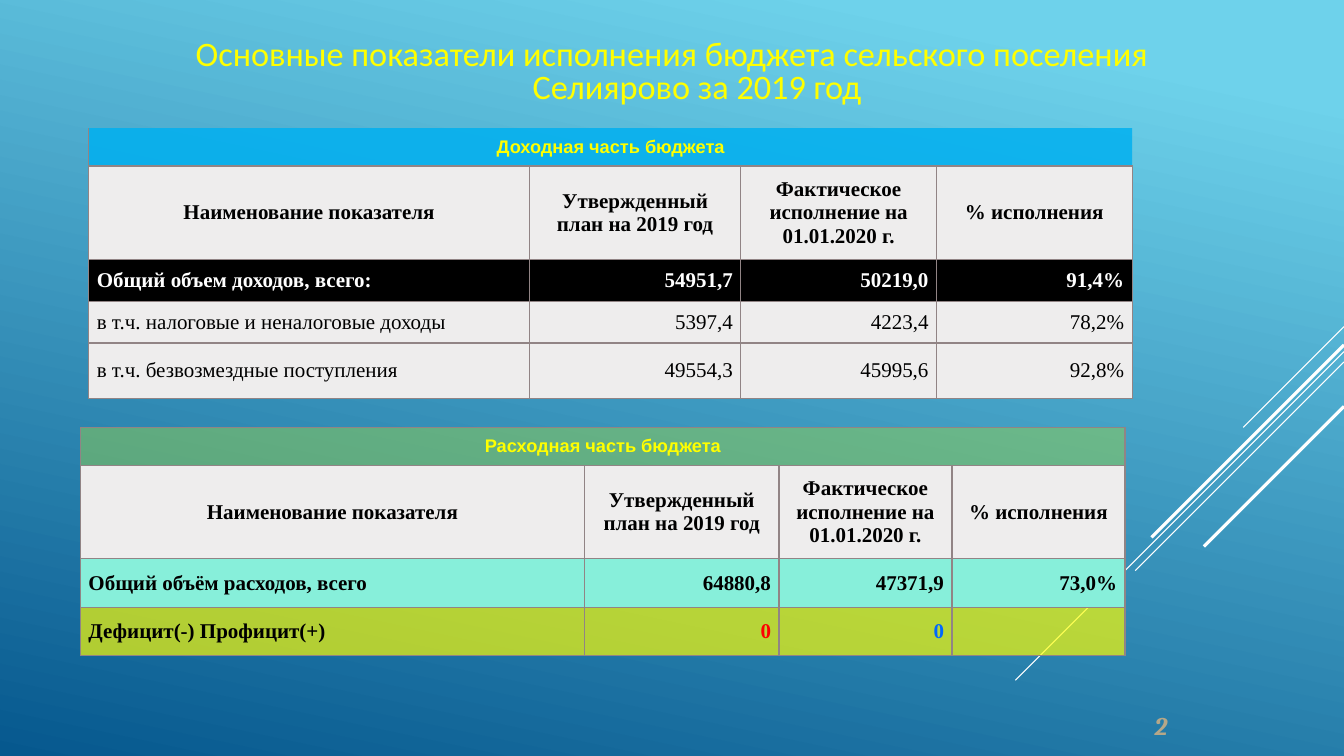
import pptx
import pptx.util
import pptx.dml.color
import pptx.enum.shapes
import pptx.enum.text
import pptx.oxml
import pptx.oxml.ns
from lxml import etree

Cm = pptx.util.Cm
Pt = pptx.util.Pt
RGBColor = pptx.dml.color.RGBColor
ALIGN = pptx.enum.text.PP_ALIGN
ANCHOR = pptx.enum.text.MSO_ANCHOR
qn = pptx.oxml.ns.qn

SKY = RGBColor(0x6E, 0xD2, 0xEB)
DEEP_BLUE = RGBColor(0x06, 0x58, 0x8E)
WHITE = RGBColor(0xFF, 0xFF, 0xFF)
BLACK = RGBColor(0x00, 0x00, 0x00)
YELLOW = RGBColor(0xFF, 0xFF, 0x00)
SAND = RGBColor(0xB5, 0xA7, 0x88)
BORDER = RGBColor(0x91, 0x84, 0x85)
PALE = RGBColor(0xEE, 0xED, 0xED)
CYAN = RGBColor(0x00, 0xB0, 0xF0)
GREEN = RGBColor(0x92, 0xD0, 0x50)
MINT = RGBColor(0x87, 0xEF, 0xDA)
RED = RGBColor(0xFF, 0x00, 0x00)
BLUE = RGBColor(0x00, 0x66, 0xFF)

HEADINGS = ("Наименование показателя", "Утвержденный план на 2019 год",
            "Фактическое исполнение на 01.01.2020 г.", "% исполнения")

# Diagonal rays from the right edge: start height, extent (cm), width (pt)
RAYS = ((8.23, 2.54, 0.75), (8.86, 8.28, 0.75), (9.12, 5.26, 0.75),
        (8.69, 4.85, 2.25), (10.24, 3.53, 2.25))


def set_font(paragraph, name, size, color, bold=False, italic=False):
    font = paragraph.font
    font.name = name
    font.size = Pt(size)
    font.bold = bold
    font.italic = italic
    font.color.rgb = color


def set_background(slide):
    fill = slide.background.fill
    fill.gradient()
    fill.gradient_angle = 258
    for stop, position, color in zip(fill.gradient_stops, (0.1, 1), (SKY, DEEP_BLUE)):
        stop.position = position
        stop.color.rgb = color


def add_ray(slide, right, top, extent, width):
    ray = slide.shapes.add_connector(
        pptx.enum.shapes.MSO_CONNECTOR.STRAIGHT,
        right, Cm(top), right - Cm(extent), Cm(top + extent))
    ray.line.color.rgb = WHITE
    ray.line.width = Pt(width)
    etree.SubElement(ray._element.spPr, qn("a:effectLst"))


def add_text(slide, box, text, anchor, alignment, spacing):
    shape = slide.shapes.add_textbox(*map(Cm, box))
    frame = shape.text_frame
    frame.word_wrap = True
    frame.vertical_anchor = anchor
    paragraph = frame.paragraphs[0]
    paragraph.text = text
    paragraph.alignment = alignment
    paragraph.line_spacing = spacing
    return paragraph


def set_borders(cell, visible):
    properties = cell._tc.get_or_add_tcPr()
    for index, side in enumerate("LRTB"):
        paint = (f'<a:solidFill><a:srgbClr val="{BORDER}"/></a:solidFill>'
                 if side in visible else "<a:noFill/>")
        properties.insert(index, pptx.oxml.parse_xml(
            f'<a:ln{side} {pptx.oxml.ns.nsdecls("a")} w="{Pt(1)}">{paint}</a:ln{side}>'))


def fill_cell(cell, fill, opacity=100):
    cell.fill.solid()
    cell.fill.fore_color.rgb = fill
    if opacity < 100:
        color = cell._tc.tcPr.find(".//" + qn("a:srgbClr"))
        etree.SubElement(color, qn("a:alpha"), val=str(opacity * 1000))


def write_cell(cell, text, alignment, *font):
    cell.vertical_anchor = ANCHOR.MIDDLE
    cell.margin_left = cell.margin_right = Cm(0.2)
    cell.margin_top = cell.margin_bottom = Cm(0.2)
    paragraph = cell.text_frame.paragraphs[0]
    paragraph.text = text
    paragraph.alignment = alignment
    set_font(paragraph, *font)


def add_budget_table(slide, left, top, widths, heights, banner, rows, banner_borders="LRTB"):
    """banner: text, fill, opacity; rows: texts, fill, opacity, text colours, bold."""
    table = slide.shapes.add_table(
        len(heights), len(widths), Cm(left), Cm(top),
        Cm(sum(widths)), Cm(sum(heights))).table
    table.first_row = table.horz_banding = False
    for column, width in zip(table.columns, widths):
        column.width = Cm(width)
    for row, height in zip(table.rows, heights):
        row.height = Cm(height)

    # Banner across all columns
    title, fill, opacity = banner
    table.cell(0, 0).merge(table.cell(0, len(widths) - 1))
    for cell in table.rows[0].cells:
        fill_cell(cell, fill, opacity)
        set_borders(cell, banner_borders)
    write_cell(table.cell(0, 0), title, ALIGN.CENTER, "Arial", 13, YELLOW, True)

    # Headings and figures
    body = [(HEADINGS, PALE, 100, [BLACK] * 4, True), *rows]
    for row_index, (texts, fill, opacity, colors, bold) in enumerate(body, 1):
        for column_index, (text, color) in enumerate(zip(texts, colors)):
            if row_index == 1:
                alignment = ALIGN.CENTER
            else:
                alignment = ALIGN.RIGHT if column_index else ALIGN.LEFT
            cell = table.cell(row_index, column_index)
            write_cell(cell, text, alignment, "Times New Roman", 15, color, bold)
            fill_cell(cell, fill, opacity)
            set_borders(cell, "LRTB")


def main():
    presentation = pptx.Presentation()
    presentation.slide_width = Cm(33.87)
    presentation.slide_height = Cm(19.05)
    slide = presentation.slides.add_slide(presentation.slide_layouts[6])

    # Backdrop
    set_background(slide)
    for ray in RAYS:
        add_ray(slide, presentation.slide_width, *ray)

    # Slide number
    number = add_text(slide, (28.35, 17.78, 1.32, 1.02), "2", ANCHOR.BOTTOM, ALIGN.RIGHT, 0.9)
    set_font(number, "Cambria", 18.1, SAND, True, True)

    # Title with a hanging indent
    title = add_text(
        slide, (3.78, 0.8, 26.31, 2.1),
        "Основные показатели исполнения бюджета сельского поселения Селиярово за 2019 год",
        ANCHOR.MIDDLE, ALIGN.CENTER, 0.8)
    set_font(title, "Calibri", 24.5, YELLOW)
    indent = title._p.get_or_add_pPr()
    indent.set("marL", str(Cm(1.27)))
    indent.set("indent", str(-Cm(1.27)))

    # Income
    add_budget_table(
        slide, 2.24, 3.23, (11.1, 5.33, 4.93, 4.93), (0.93, 2.36, 1.05, 1.05, 1.4),
        ("Доходная часть бюджета", CYAN, 84),
        [(("Общий объем доходов, всего:", "54951,7", "50219,0", "91,4%"),
          BLACK, 100, [WHITE] * 4, True),
         (("в т.ч. налоговые и неналоговые доходы", "5397,4", "4223,4", "78,2%"),
          PALE, 100, [BLACK] * 4, False),
         (("в т.ч. безвозмездные поступления", "49554,3", "45995,6", "92,8%"),
          PALE, 100, [BLACK] * 4, False)],
        banner_borders="LB")

    # Expenses
    add_budget_table(
        slide, 2.03, 10.77, (12.7, 4.9, 4.36, 4.36), (0.94, 2.36, 1.22, 1.22),
        ("Расходная часть бюджета", GREEN, 50),
        [(("Общий объём расходов, всего", "64880,8", "47371,9", "73,0%"),
          MINT, 100, [BLACK] * 4, True),
         (("Дефицит(-) Профицит(+)", "0", "0", ""),
          YELLOW, 67, [BLACK, RED, BLUE, BLACK], True)])

    presentation.save("out.pptx")


if __name__ == "__main__":
    main()
